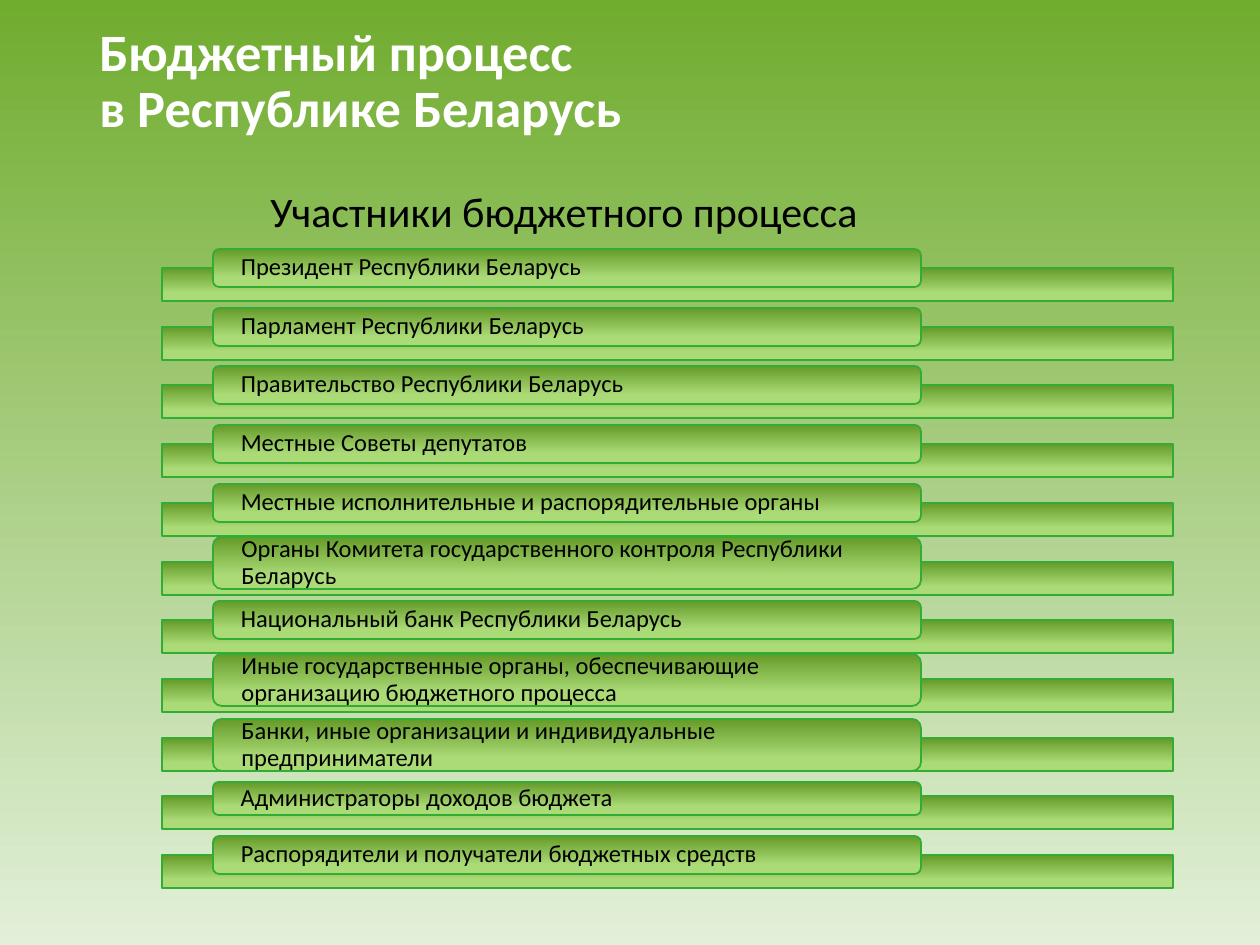
from typing import NamedTuple

from pptx import Presentation
from pptx.dml.color import RGBColor
from pptx.dml.fill import FillFormat
from pptx.enum.shapes import MSO_SHAPE as Shape
from pptx.enum.text import MSO_ANCHOR as Anchor, PP_ALIGN as Align
from pptx.text.text import TextFrame
from pptx.util import Pt

EMU = 914400 / 126  # one px
FONT = "Calibri"

WHITE = RGBColor(0xFF, 0xFF, 0xFF)
BLACK = RGBColor(0x00, 0x00, 0x00)
TOP = RGBColor(0x70, 0xAC, 0x2E)
BASE = RGBColor(0xE2, 0xF0, 0xD9)
DARK = RGBColor(0x65, 0x9B, 0x29)
LIGHT = RGBColor(0xAB, 0xDB, 0x77)
EDGE = RGBColor(0x32, 0xAC, 0x35)

# Bars: first top, step between tops, and height
BAR_TOP, STEP, BAR_H = 268, 58.7, 33


class Member(NamedTuple):
    name: str
    rise: int = 19  # how far the label stands above its bar
    height: int = 38


MEMBERS = [
    Member("Президент Республики Беларусь"),
    Member("Парламент Республики Беларусь"),
    Member("Правительство Республики Беларусь"),
    Member("Местные Советы депутатов"),
    Member("Местные исполнительные и распорядительные органы"),
    Member("Органы Комитета государственного контроля Республики Беларусь", 25, 52),
    Member("Национальный банк Республики Беларусь"),
    Member("Иные государственные органы, обеспечивающие организацию "
           "бюджетного процесса", 25, 52),
    Member("Банки, иные организации и индивидуальные предприниматели", 19, 52),
    Member("Администраторы доходов бюджета", 14, 33),
    Member("Распорядители и получатели бюджетных средств"),
]


def px(*vals: int) -> list[int]:
    return [round(v * EMU) for v in vals]


def shade(fill: FillFormat, start: RGBColor, end: RGBColor, stop: float = 1) -> None:
    """Fill from top to bottom."""
    fill.gradient()
    fill.gradient_angle = 270
    first, last = fill.gradient_stops
    first.color.rgb, first.position = start, 0
    last.color.rgb, last.position = end, stop


def write(frame: TextFrame, text: str, size: int, color: RGBColor,
          bold: bool = False, lead: float = 0.9) -> None:
    frame.text = text
    para = frame.paragraphs[0]
    para.alignment = Align.LEFT
    para.line_spacing = lead
    for run in para.runs:
        font = run.font
        font.name, font.size, font.bold = FONT, Pt(size), bold
        font.color.rgb = color


def add_box(kind: Shape, x: int, y: int, w: int, h: int):
    box = slide.shapes.add_shape(kind, *px(x, y, w, h))
    box.shadow.inherit = False
    shade(box.fill, DARK, LIGHT, 0.76)
    box.line.color.rgb = EDGE
    box.line.width = Pt(1)
    return box


def add_row(y: int, item: Member) -> None:
    add_box(Shape.RECTANGLE, 162, y, 1011, BAR_H)
    tab = add_box(Shape.ROUNDED_RECTANGLE, 213, y - item.rise, 708, item.height)
    frame = tab.text_frame
    frame.word_wrap = True
    frame.vertical_anchor = Anchor.MIDDLE
    frame.margin_left, frame.margin_right = px(26, 26)
    frame.margin_top = frame.margin_bottom = 0
    write(frame, item.name, 14, BLACK)


deck = Presentation()
deck.slide_width, deck.slide_height = px(1260, 945)
slide = deck.slides.add_slide(deck.slide_layouts[6])
shade(slide.background.fill, TOP, BASE)

# Title
title = slide.shapes.add_textbox(*px(87, 30, 1086, 105)).text_frame
title.word_wrap = True
title.vertical_anchor = Anchor.MIDDLE
write(title, "Бюджетный процесс\vв Республике Беларусь", 30, WHITE, bold=True)

# Heading of the list
head = slide.shapes.add_textbox(*px(258, 179, 619, 63)).text_frame
head.word_wrap = False
write(head, "Участники бюджетного процесса", 24, BLACK, lead=1.0)

# Bars with their labels
for i, item in enumerate(MEMBERS):
    add_row(BAR_TOP + round(i * STEP), item)

deck.save("out.pptx")
